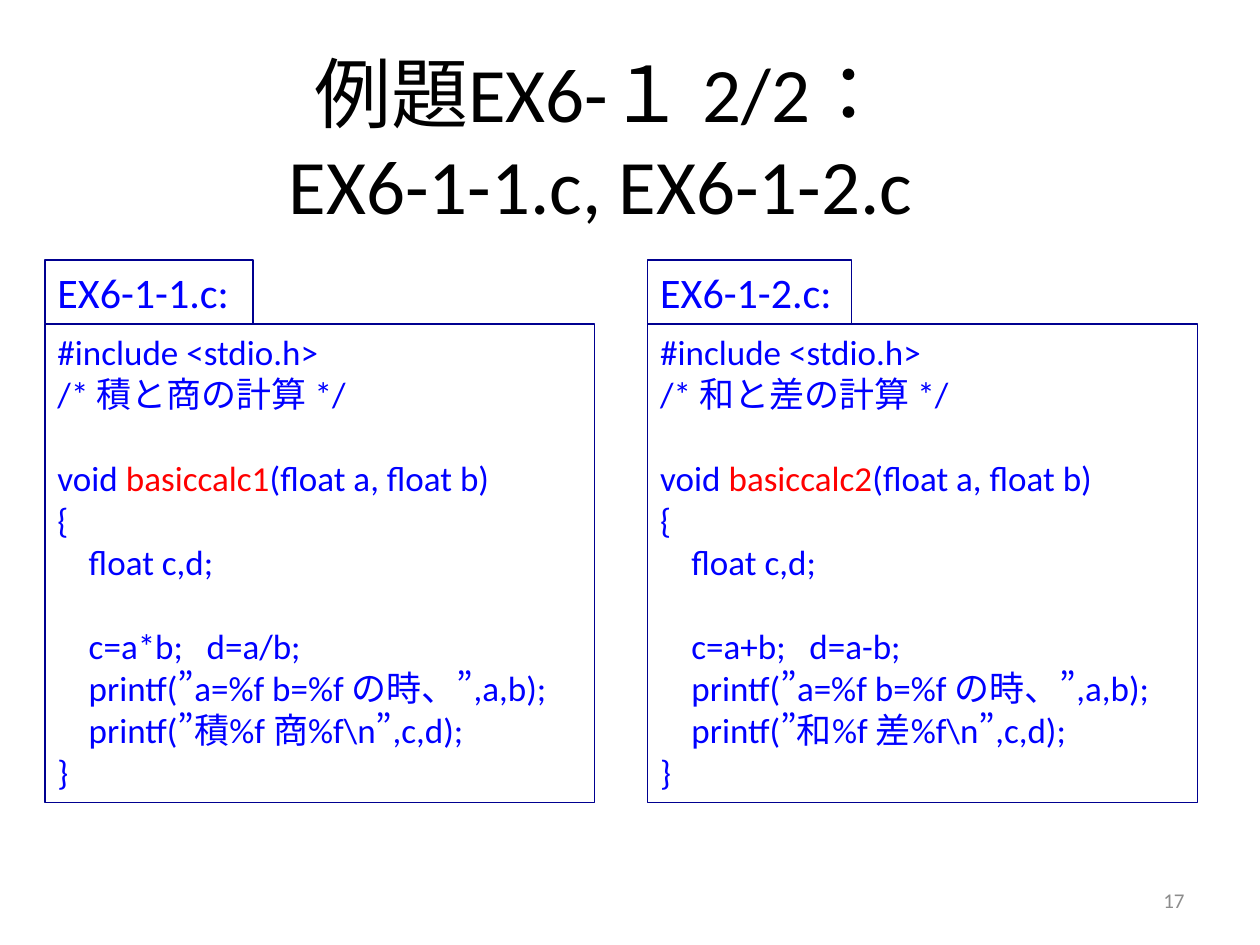
from pptx import Presentation
from pptx.dml.color import RGBColor
from pptx.enum.lang import MSO_LANGUAGE_ID
from pptx.enum.shapes import MSO_SHAPE
from pptx.enum.text import MSO_ANCHOR, PP_ALIGN
from pptx.util import Cm, Pt

RECTANGLE = MSO_SHAPE.RECTANGLE
TOP, MIDDLE = MSO_ANCHOR.TOP, MSO_ANCHOR.MIDDLE
LEFT, CENTER, RIGHT = PP_ALIGN.LEFT, PP_ALIGN.CENTER, PP_ALIGN.RIGHT
JAPANESE = MSO_LANGUAGE_ID.JAPANESE

BLACK = RGBColor(0x00, 0x00, 0x00)
GRAY = RGBColor(0x8C, 0x8C, 0x8C)
NAVY = RGBColor(0x00, 0x00, 0x90)
BLUE = RGBColor(0x00, 0x00, 0xFF)
RED = RGBColor(0xFF, 0x00, 0x00)

FONT = "Calibri"
TITLE_ONLY = 5
CODE_INDENT = Cm(0.63)
CODE_GAP = Pt(24)  # one line of code

# Left edge, label width, file name, comment, function, calculation, result line
PROGRAMS = [
    (Cm(0.91), Cm(4.19), "EX6-1-1.c:", "/* 積と商の計算 */", "basiccalc1",
     "c=a*b;   d=a/b;", "printf(”積%f 商%f\\n”,c,d);"),
    (Cm(13.06), Cm(4.11), "EX6-1-2.c:", "/* 和と差の計算 */", "basiccalc2",
     "c=a+b;   d=a-b;", "printf(”和%f 差%f\\n”,c,d);"),
]


class SlideBuilder:
    """Holds the style and the current slide."""

    def __init__(self, presentation):
        layout = presentation.slide_layouts[TITLE_ONLY]
        self.slide = presentation.slides.add_slide(layout)

    def style(self, paragraph, size, color, alignment=LEFT):
        paragraph.alignment = alignment
        paragraph.font.name = FONT
        paragraph.font.size = Pt(size)
        paragraph.font.color.rgb = color
        # Japanese text gets its own glyphs and narrow punctuation
        for run in paragraph.runs:
            run.font.language_id = JAPANESE

    def title(self, text, left, top, width, height):
        shape = self.slide.shapes.title
        shape.left, shape.top, shape.width, shape.height = left, top, width, height
        frame = shape.text_frame
        frame.text = text
        frame.vertical_anchor = MIDDLE
        self.style(frame.paragraphs[0], 44, BLACK, CENTER)

    def page_number(self, text, left, top, width, height):
        frame = self.slide.shapes.add_textbox(left, top, width, height).text_frame
        frame.word_wrap = True
        frame.vertical_anchor = MIDDLE
        frame.text = text
        self.style(frame.paragraphs[0], 12, GRAY, RIGHT)

    def box(self, left, top, width, height):
        shape = self.slide.shapes.add_shape(RECTANGLE, left, top, width, height)
        shape.shadow.inherit = False
        shape.fill.background()
        shape.line.color.rgb = NAVY
        shape.line.width = Pt(0.75)
        frame = shape.text_frame
        frame.word_wrap = True
        frame.vertical_anchor = TOP
        frame.margin_right = 0
        return frame

    def label(self, text, left, top, width, height):
        frame = self.box(left, top, width, height)
        frame.text = text
        self.style(frame.paragraphs[0], 24, BLUE)

    def code(self, lines, left, top, width, height):
        """Each line is (runs, indented, gap before); a run is (text, color)."""
        frame = self.box(left, top, width, height)
        for number, (runs, indented, gap) in enumerate(lines):
            paragraph = frame.add_paragraph() if number else frame.paragraphs[0]
            for text, color in runs:
                run = paragraph.add_run()
                run.text = text
                run.font.color.rgb = color
            self.style(paragraph, 20, BLUE)
            if indented:
                paragraph._p.get_or_add_pPr().set("marL", str(CODE_INDENT))
            if gap:
                paragraph.space_before = CODE_GAP


def code_lines(comment, function, calculation, result):
    def line(text, indented=False, gap=False):
        return [(text, BLUE)], indented, gap

    signature = [("void ", BLUE), (function, RED), ("(float a, float b)", BLUE)]
    return [
        line("#include <stdio.h>"),
        line(comment),
        (signature, False, True),
        line("{"),
        line("float c,d;", indented=True),
        line(calculation, indented=True, gap=True),
        line("printf(”a=%f b=%f の時、”,a,b);", indented=True),
        line(result, indented=True),
        line("}"),
    ]


def main():
    presentation = Presentation()
    presentation.slide_width, presentation.slide_height = Cm(25.4), Cm(19.05)
    builder = SlideBuilder(presentation)

    # Heading and page number
    builder.title("例題EX6-１ 2/2：\vEX6-1-1.c, EX6-1-2.c",
                  Cm(2.54), Cm(0.76), Cm(19.15), Cm(4.04))
    builder.page_number("17", Cm(18.2), Cm(17.65), Cm(5.93), Cm(1.01))

    # The two programs, side by side
    for left, label_width, name, *parts in PROGRAMS:
        builder.code(code_lines(*parts), left, Cm(6.53), Cm(11.08), Cm(9.65))
        builder.label(name, left, Cm(5.24), label_width, Cm(1.28))

    presentation.save("out.pptx")


if __name__ == "__main__":
    main()
